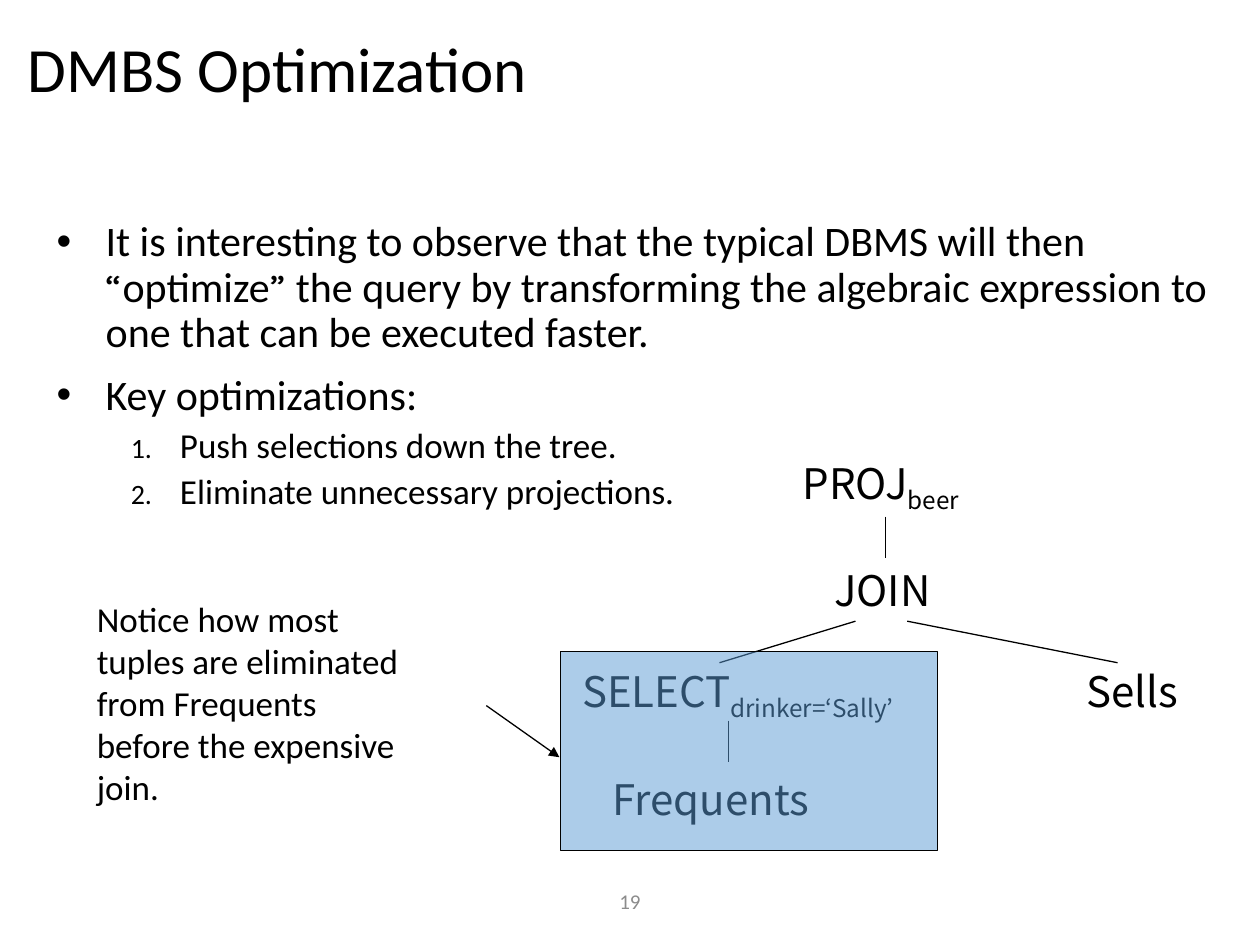
import dataclasses

import lxml.etree
import pptx
import pptx.dml.color
import pptx.enum.shapes
import pptx.enum.text
import pptx.oxml.ns
import pptx.util

Inches = pptx.util.Inches
Align = pptx.enum.text.PP_ALIGN
Anchor = pptx.enum.text.MSO_ANCHOR


@dataclasses.dataclass(frozen=True)
class Theme:
    """Fonts, colours and type sizes of the slide."""
    sans: str = "Calibri"
    quote: str = "Karla"
    tree: str = "Noto Sans CJK KR"
    ink: str = "000000"
    grey: str = "8C8C8C"
    blue: str = "5B9BD5"
    head: int = 36
    body: int = 24
    note: int = 20
    foot: int = 12
    line: float = 0.75


THEME = Theme()


def tint(color, code):
    """Set a colour from its hex code."""
    color.rgb = pptx.dml.color.RGBColor.from_string(code)


def add_xml(owner, tag, **attrs):
    """Append a drawing element to its owner."""
    return lxml.etree.SubElement(owner, pptx.oxml.ns.qn(tag), attrs)


def style(run, size, font=THEME.sans, code=THEME.ink):
    """Format one run."""
    run.font.size = pptx.util.Pt(size)
    run.font.name = font
    tint(run.font.color, code)


def add_run(para, text, size, font=THEME.sans):
    """Add a formatted run and return it."""
    run = para.add_run()
    run.text = text
    style(run, size, font)
    return run


def add_box(slide, left, top, width, height):
    """Add a wrapping text box and return its frame."""
    spot = [Inches(part) for part in (left, top, width, height)]
    frame = slide.shapes.add_textbox(*spot).text_frame
    frame.word_wrap = True
    return frame


def add_line(slide, start, end, arrow=False):
    """Add a thin straight line, with an arrowhead if asked."""
    kind = pptx.enum.shapes.MSO_CONNECTOR.STRAIGHT
    ends = [Inches(part) for part in (*start, *end)]
    link = slide.shapes.add_connector(kind, *ends)
    link.line.width = pptx.util.Pt(THEME.line)
    tint(link.line.color, THEME.ink)
    if arrow:
        add_xml(link.line._get_or_add_ln(), "a:tailEnd", type="triangle")
    add_xml(link._element.spPr, "a:effectLst")


def add_title(slide, left, top, width, height):
    """Place and format the title."""
    title = slide.shapes.title
    title.left, title.top = Inches(left), Inches(top)
    title.width, title.height = Inches(width), Inches(height)
    frame = title.text_frame
    frame.text = "DMBS Optimization"
    frame.vertical_anchor = Anchor.MIDDLE
    para = frame.paragraphs[0]
    para.alignment = Align.LEFT
    para.line_spacing = 0.9
    style(para.runs[0], THEME.head)


def add_body(slide, left, top, width, height):
    """Add the bulleted points and the numbered steps."""
    frame = add_box(slide, left, top, width, height)
    lead = [
        ("It is interesting to observe that the typical DBMS will then ", THEME.sans),
        ("“", THEME.quote),
        ("optimize", THEME.sans),
        ("”", THEME.quote),
        (" the query by transforming the algebraic expression to one that "
         "can be executed faster.", THEME.sans),
    ]
    items = [
        (0, lead),
        (0, [("Key optimizations:", THEME.sans)]),
        (1, [("Push selections down the tree.", THEME.sans)]),
        (1, [("Eliminate unnecessary projections.", THEME.sans)]),
    ]
    for row, (level, parts) in enumerate(items):
        para = frame.add_paragraph() if row else frame.paragraphs[0]
        para.level = level
        para.line_spacing = 0.9
        para.space_before = pptx.util.Pt(5 if level else 10)
        for text, font in parts:
            add_run(para, text, THEME.note if level else THEME.body, font)
        props = para._p.get_or_add_pPr()
        props.set("marL", str(Inches(0.98 if level else 0.39)))
        props.set("indent", str(Inches(-0.39)))
        if level:
            add_xml(props, "a:buSzPct", val="80000")
            add_xml(props, "a:buFont", typeface=THEME.sans)
            add_xml(props, "a:buAutoNum", type="arabicPeriod")
        else:
            add_xml(props, "a:buFont", typeface="Arial")
            add_xml(props, "a:buChar", char="•")


def add_tree(slide, left, top):
    """Add the query tree with its nodes and edges."""
    nodes = [
        (1.84, 0.05, 1.5, "PROJ", "beer"),
        (2.09, 0.9, 1, "JOIN", ""),
        (0.09, 1.7, 2.8, "SELECT", "drinker=‘Sally’"),
        (4.09, 1.7, 1, "Sells", ""),
        (0.33, 2.56, 2, "Frequents", ""),
    ]
    for across, down, width, name, sub in nodes:
        frame = add_box(slide, left + across, top + down, width, 0.48)
        frame.margin_left = frame.margin_right = 0
        frame.margin_top = frame.margin_bottom = 0
        para = frame.paragraphs[0]
        add_run(para, name, THEME.body, THEME.tree)
        if sub:
            run = add_run(para, sub, THEME.body, THEME.tree)
            run.font._element.set("baseline", "-25000")
    edges = [
        (2.5, 0.52, 2.5),
        (2.26, 1.35, 1.18),
        (2.67, 1.35, 4.34),
        (1.25, 2.14, 1.25),
    ]
    for start, down, end in edges:
        high = top + down
        add_line(slide, (left + start, high), (left + end, high + 0.33))


def add_focus(slide, left, top, width, height):
    """Add the see-through box over the pushed selection."""
    spot = [Inches(part) for part in (left, top, width, height)]
    rect = slide.shapes.add_shape(pptx.enum.shapes.MSO_SHAPE.RECTANGLE, *spot)
    rect.shadow.inherit = False
    rect.fill.solid()
    tint(rect.fill.fore_color, THEME.blue)
    fill = rect._element.spPr.find(pptx.oxml.ns.qn("a:solidFill"))
    add_xml(fill[0], "a:alpha", val="50000")
    rect.line.width = pptx.util.Pt(THEME.line)
    tint(rect.line.color, THEME.ink)


def add_note(slide, left, top, width, height):
    """Add the remark and its arrow to the focus box."""
    frame = add_box(slide, left, top, width, height)
    frame.text = ("Notice how most tuples are eliminated\n"
                  "from Frequents\nbefore the expensive join.")
    for para in frame.paragraphs:
        style(para.runs[0], THEME.note)
    start = left + width + 0.33, top + 0.91
    add_line(slide, start, (start[0] + 0.58, start[1] + 0.41), True)


def add_foot(slide, left, top, width, height):
    """Add the slide number."""
    frame = add_box(slide, left, top, width, height)
    frame.text = "19"
    frame.vertical_anchor = Anchor.MIDDLE
    frame.paragraphs[0].alignment = Align.CENTER
    style(frame.paragraphs[0].runs[0], THEME.foot, code=THEME.grey)


def main():
    """Build and save the slide."""
    deck = pptx.Presentation()
    deck.slide_width, deck.slide_height = Inches(10), Inches(7.5)
    slide = deck.slides.add_slide(deck.slide_layouts[5])
    add_foot(slide, 3.31, 6.95, 3.38, 0.4)
    add_title(slide, 0.12, 0.08, 9.76, 0.99)
    add_body(slide, 0.35, 1.7, 9.45, 4.75)
    add_tree(slide, 4.53, 3.58)
    add_focus(slide, 4.45, 5.17, 2.99, 1.58)
    add_note(slide, 0.67, 4.69, 2.86, 1.77)
    deck.save("out.pptx")


if __name__ == "__main__":
    main()
